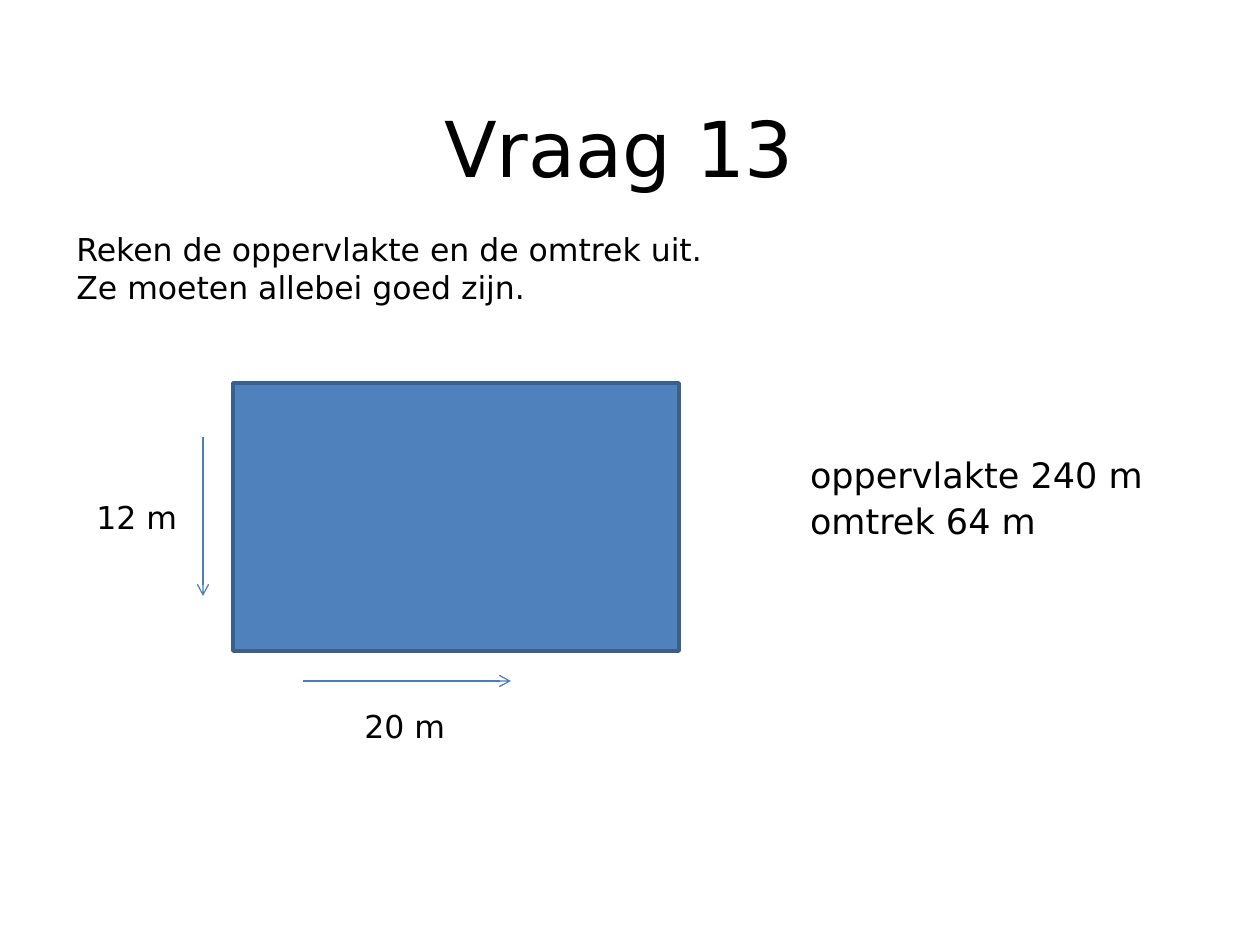
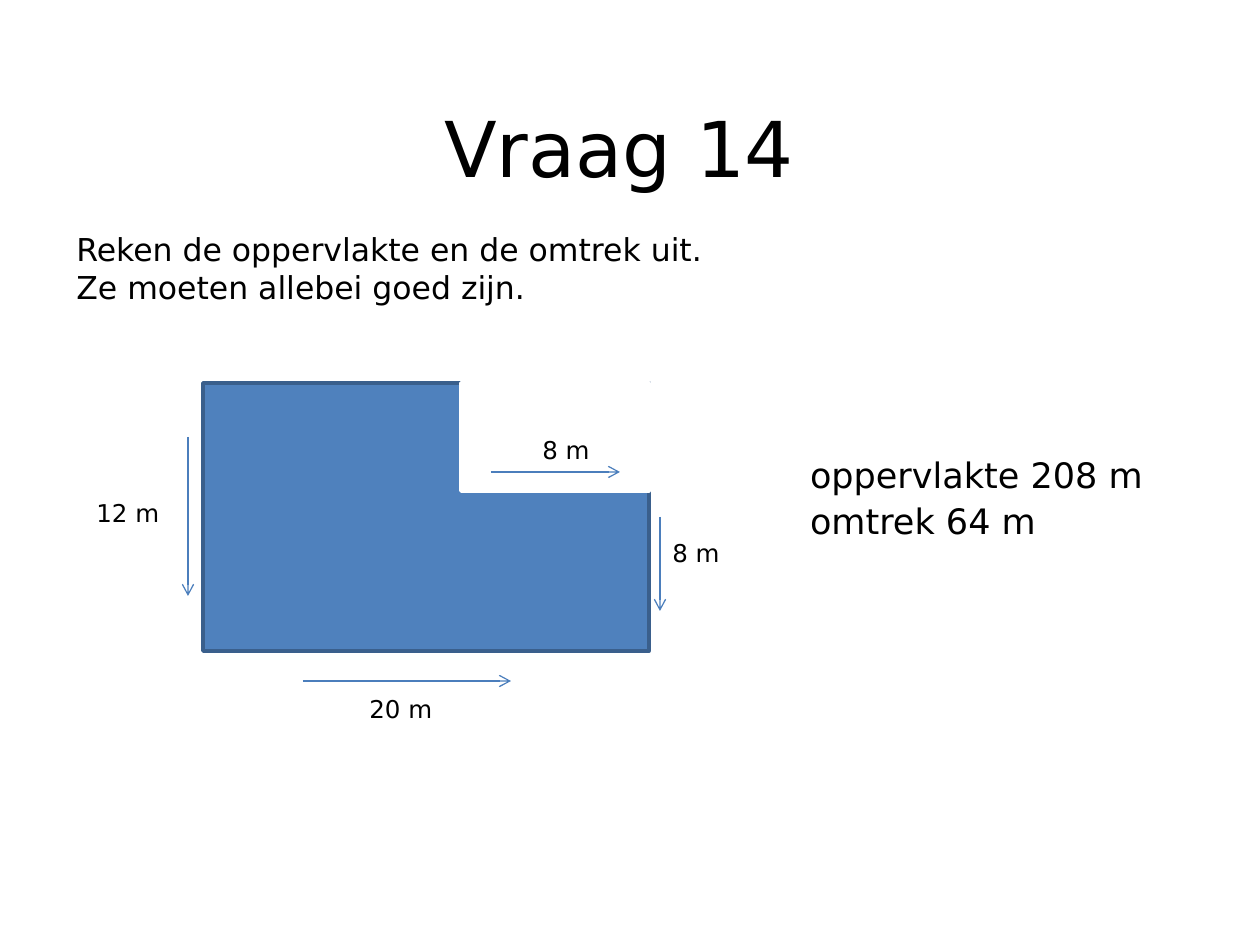
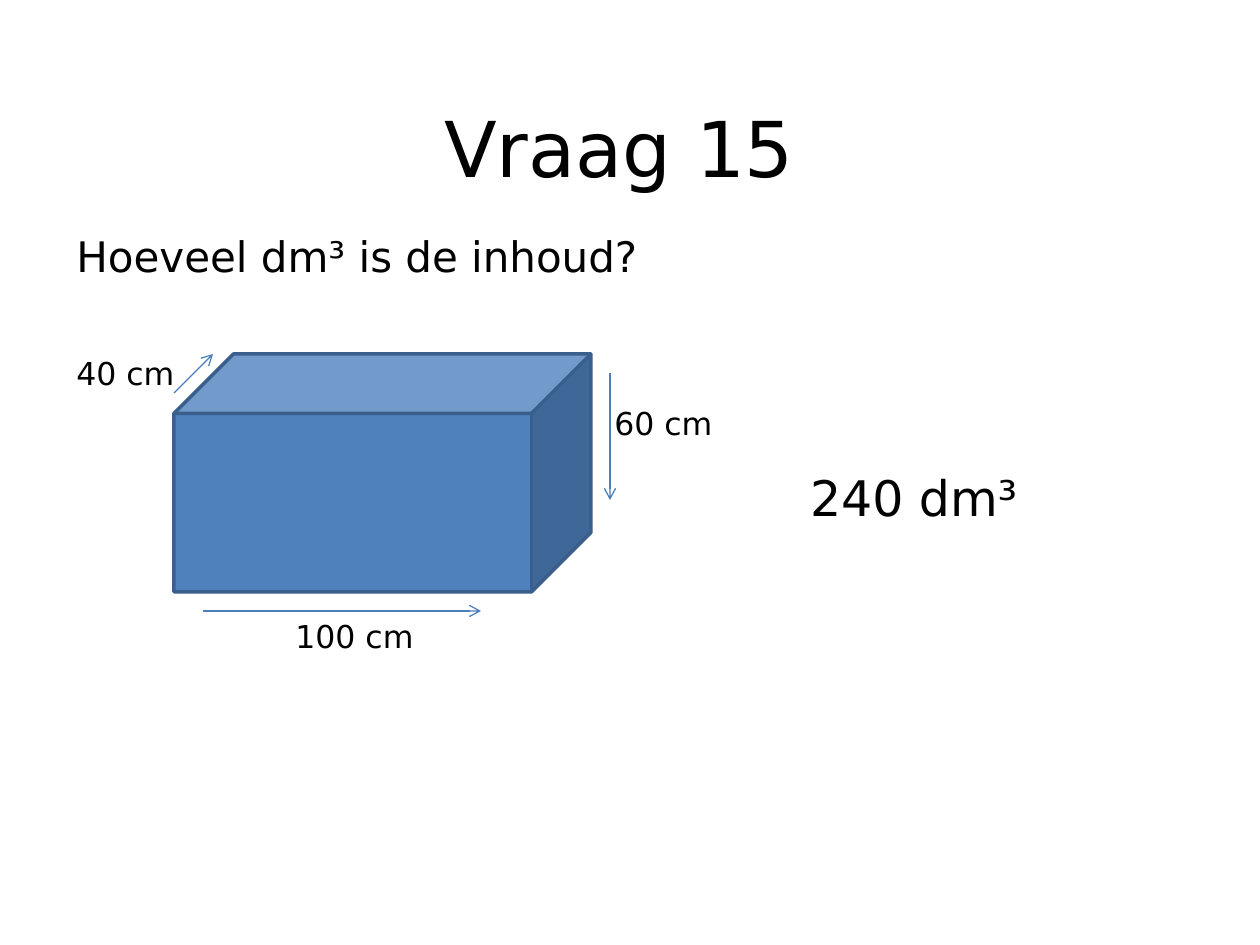
import pptx
import pptx.util
from lxml import etree
from pptx.dml.color import RGBColor
from pptx.enum.shapes import MSO_CONNECTOR, MSO_SHAPE
from pptx.enum.text import MSO_ANCHOR, PP_ALIGN
from pptx.oxml.ns import qn

FONT = "DejaVu Sans"
BLACK = RGBColor(0x00, 0x00, 0x00)
WHITE = RGBColor(0xFF, 0xFF, 0xFF)
FIGURE_BLUE = RGBColor(0x4F, 0x81, 0xBD)
OUTLINE_BLUE = RGBColor(0x3A, 0x5F, 0x8C)
ARROW_BLUE = RGBColor(0x4B, 0x7E, 0xBC)

TITLE_BOX = (84, 45, 1071, 203)
ANSWER_BOX = (748, 224, 436, 553)
ANSWER_INDENT = 62
QUESTION_LEFT, QUESTION_TOP, QUESTION_WIDTH = 64, 224, 684
AREA_QUESTION = ["Reken de oppervlakte en de omtrek uit.", "Ze moeten allebei goed zijn."]

# Figures: preset, box, fill, outline. Arrows: start and end point.
# Labels: text, left, top, width.
QUESTIONS = [
    dict(
        title="Vraag 13",
        question=AREA_QUESTION, question_size=18,
        answer=["oppervlakte 240 m", "omtrek 64 m"], answer_size=20,
        figures=[(MSO_SHAPE.RECTANGLE, (233, 383, 446, 268), FIGURE_BLUE, OUTLINE_BLUE)],
        arrows=[(303, 681, 511, 681), (203, 437, 203, 596)],
        labels=[("20 m", 352, 701, 140), ("12 m", 84, 492, 107)], label_size=18,
    ),
    dict(
        title="Vraag 14",
        question=AREA_QUESTION, question_size=18,
        answer=["oppervlakte 208 m", "omtrek 64 m"], answer_size=20,
        figures=[
            (MSO_SHAPE.RECTANGLE, (203, 383, 446, 268), FIGURE_BLUE, OUTLINE_BLUE),
            (MSO_SHAPE.RECTANGLE, (461, 383, 188, 108), WHITE, WHITE),
        ],
        arrows=[(303, 681, 511, 681), (188, 437, 188, 596),
                (660, 517, 660, 611), (491, 472, 620, 472)],
        labels=[("20 m", 357, 688, 140), ("12 m", 84, 492, 107),
                ("8 m", 660, 532, 100), ("8 m", 530, 429, 100)], label_size=14,
    ),
    dict(
        title="Vraag 15",
        question=["Hoeveel dm³ is de inhoud?"], question_size=24,
        answer=["240 dm³"], answer_size=28,
        figures=[(MSO_SHAPE.CUBE, (174, 354, 417, 238), FIGURE_BLUE, OUTLINE_BLUE)],
        arrows=[(203, 611, 481, 611), (174, 393, 213, 354), (610, 373, 610, 500)],
        labels=[("40 cm", 64, 348, 139), ("100 cm", 283, 611, 160),
                ("60 cm", 602, 398, 139)], label_size=18,
    ),
]


def px(*lengths):
    """Turn pixels, 126 to the inch, into a list of EMU."""
    return [pptx.util.Emu(round(length * 914400 / 126)) for length in lengths]


def write_text(slide, lines, box, size, align=PP_ALIGN.LEFT, anchor=MSO_ANCHOR.TOP,
               indent=None, line_spacing=None, gap=0):
    """Add a text box with one paragraph per line; gap is the points between them."""
    frame = slide.shapes.add_textbox(*px(*box)).text_frame
    frame.word_wrap = True
    frame.vertical_anchor = anchor
    if indent is not None:
        frame.margin_left = px(indent)[0]
    for number, line in enumerate(lines):
        paragraph = frame.add_paragraph() if number else frame.paragraphs[0]
        paragraph.alignment = align
        paragraph.line_spacing = line_spacing
        if number and gap:
            paragraph.space_before = pptx.util.Pt(gap)
        run = paragraph.add_run()
        run.text = line
        run.font.name = FONT
        run.font.size = pptx.util.Pt(size)
        run.font.color.rgb = BLACK


deck = pptx.Presentation()
deck.slide_width, deck.slide_height = px(1260, 945)

for item in QUESTIONS:
    slide = deck.slides.add_slide(deck.slide_layouts[6])
    write_text(slide, [item["title"]], TITLE_BOX, 44,
               align=PP_ALIGN.CENTER, anchor=MSO_ANCHOR.MIDDLE)
    write_text(slide, item["answer"], ANSWER_BOX, item["answer_size"],
               anchor=MSO_ANCHOR.MIDDLE, indent=ANSWER_INDENT, line_spacing=0.9, gap=4.7)
    question_height = 89 if len(item["question"]) > 1 else 63
    write_text(slide, item["question"],
               (QUESTION_LEFT, QUESTION_TOP, QUESTION_WIDTH, question_height),
               item["question_size"])

    for preset, box, fill, outline in item["figures"]:
        figure = slide.shapes.add_shape(preset, *px(*box))
        figure.shadow.inherit = False
        figure.fill.solid()
        figure.fill.fore_color.rgb = fill
        figure.line.color.rgb = outline
        figure.line.width = pptx.util.Pt(2)

    for ends in item["arrows"]:
        arrow = slide.shapes.add_connector(MSO_CONNECTOR.STRAIGHT, *px(*ends))
        arrow.line.color.rgb = ARROW_BLUE
        arrow.line.width = pptx.util.Pt(0.75)
        etree.SubElement(arrow.line._get_or_add_ln(), qn("a:tailEnd"), type="arrow")
        etree.SubElement(arrow._element.spPr, qn("a:effectLst"))

    for text, left, top, width in item["labels"]:
        write_text(slide, [text], (left, top, width, 50), item["label_size"])

deck.save("out.pptx")
